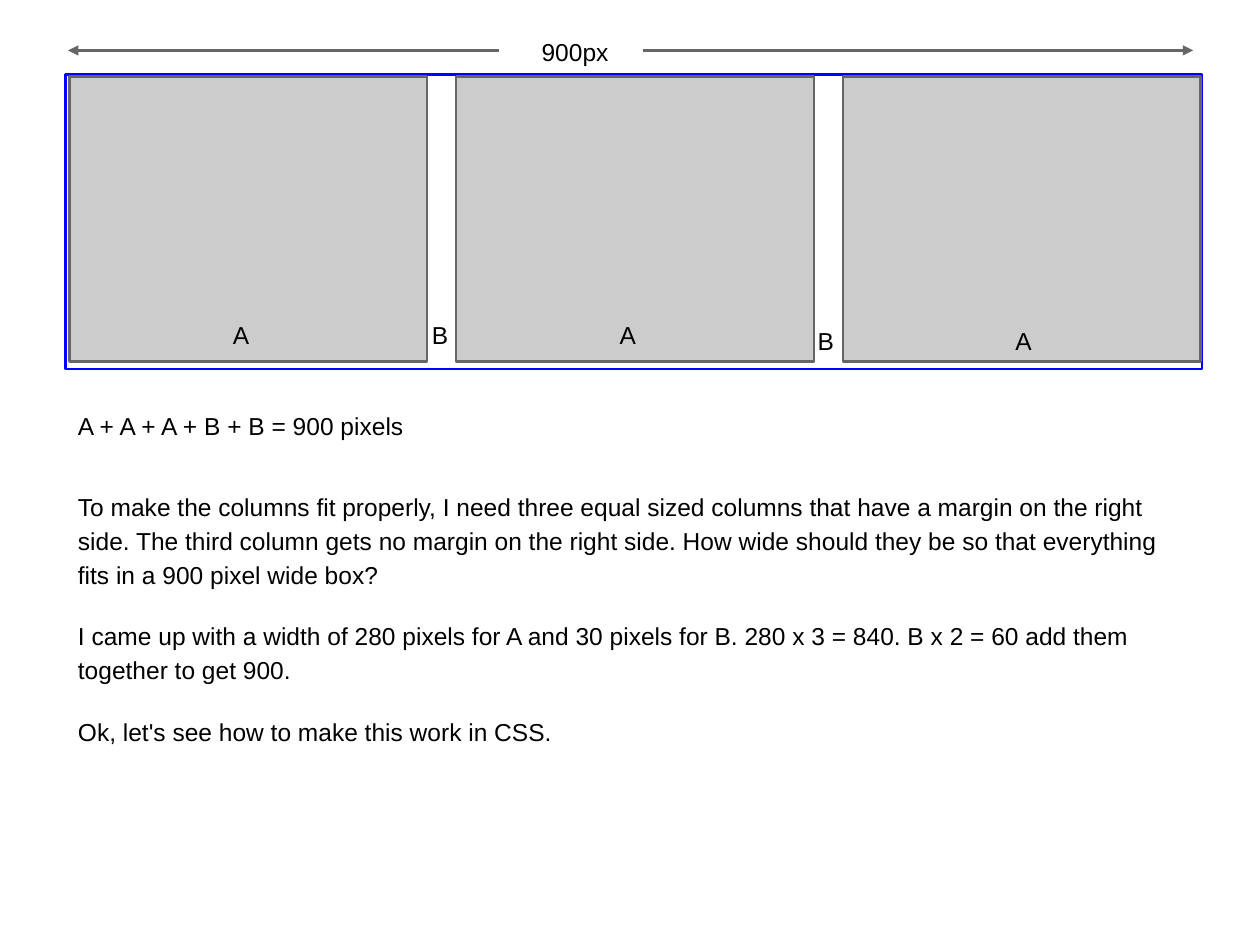
import pptx
import pptx.dml.color
import pptx.enum.shapes
import pptx.oxml
import pptx.oxml.ns
import pptx.util


def color(hex_string):
    return pptx.dml.color.RGBColor.from_string(hex_string)


def write(paragraph, text, font="Arial", size=14, fill="000000", spacing=None, before=0):
    paragraph.text = text
    paragraph.font.name = font
    paragraph.font.size = pptx.util.Pt(size)
    paragraph.font.color.rgb = color(fill)
    paragraph.space_before = pptx.util.Pt(before)
    if spacing:
        paragraph.line_spacing = spacing


class Diagram:
    """Places elements on a grid of 100 columns by 75 rows."""
    columns, rows = 100, 75
    gray, light_gray, blue = "666666", "CCCCCC", "0000FF"
    line_width = pptx.util.Pt(1.5)

    def __init__(self, presentation):
        self.slide = presentation.slides.add_slide(presentation.slide_layouts[6])
        self.column = presentation.slide_width / self.columns
        self.row = presentation.slide_height / self.rows

    def place(self, *lengths):
        """Turn alternating column and row counts into slide lengths."""
        units = (self.column, self.row) * 2
        return [round(length * unit) for length, unit in zip(lengths, units)]

    def box(self, left, top, width, height, outline, fill=None):
        shape = self.slide.shapes.add_shape(
            pptx.enum.shapes.MSO_SHAPE.RECTANGLE, *self.place(left, top, width, height))
        shape.shadow.inherit = False
        shape.line.color.rgb = color(outline)
        shape.line.width = self.line_width
        if fill:
            shape.fill.solid()
            shape.fill.fore_color.rgb = color(fill)
        else:
            shape.fill.background()

    def arrow(self, start, end, row):
        connector = self.slide.shapes.add_connector(
            pptx.enum.shapes.MSO_CONNECTOR.STRAIGHT, *self.place(start, row, end, row))
        connector.line.color.rgb = color(self.gray)
        connector.line.width = self.line_width
        namespace = pptx.oxml.ns.nsdecls("a")
        connector.line._get_or_add_ln().append(
            pptx.oxml.parse_xml(f'<a:tailEnd {namespace} type="triangle"/>'))
        connector._element.spPr.append(pptx.oxml.parse_xml(f"<a:effectLst {namespace}/>"))

    def text(self, left, top, width, height, *texts, gap=0, **style):
        frame = self.slide.shapes.add_textbox(
            *self.place(left, top, width, height)).text_frame
        frame.word_wrap = True
        frame.margin_left = frame.margin_right = pptx.util.Inches(0.1)
        frame.margin_top = frame.margin_bottom = pptx.util.Inches(0.1)
        for index, text in enumerate(texts):
            paragraph = frame.add_paragraph() if index else frame.paragraphs[0]
            write(paragraph, text, before=gap if index else 0, **style)


def main():
    presentation = pptx.Presentation()
    presentation.slide_width = pptx.util.Inches(10)
    presentation.slide_height = pptx.util.Inches(7.5)
    diagram = Diagram(presentation)

    # Container and its three columns
    diagram.box(5.2, 5.9, 90.2, 23.4, diagram.blue)
    for index in range(3):
        diagram.box(5.5 + 30.7 * index, 6.1, 28.4, 22.6, diagram.gray, diagram.light_gray)

    # Total width
    diagram.text(42, 1.9, 8.8, 3, "900px")
    diagram.arrow(51, 94.7, 4)
    diagram.arrow(39.6, 5.4, 4)

    # Column and margin labels
    labels = [("A", 17.5, 24.4), ("A", 48.2, 24.4), ("A", 79.6, 24.9),
              ("B", 33.3, 24.4), ("B", 63.9, 24.9)]
    for label, left, top in labels:
        diagram.text(left, top, 4.4, 3, label)

    # Formula and explanation
    diagram.text(5.2, 31.6, 30.3, 4.9, "A + A + A + B + B = 900 pixels")
    diagram.text(
        5.2, 37.7, 90.2, 23.4,
        "To make the columns fit properly, I need three equal sized columns that have "
        "a margin on the right side. The third column gets no margin on the right side. "
        "How wide should they be so that everything fits in a 900 pixel wide box?",
        "I came up with a width of 280 pixels for A and 30 pixels for B. "
        "280 x 3 = 840. B x 2 = 60 add them together to get 900.",
        "Ok, let's see how to make this work in CSS.",
        gap=16, spacing=1.15)

    presentation.save("out.pptx")


if __name__ == "__main__":
    main()
